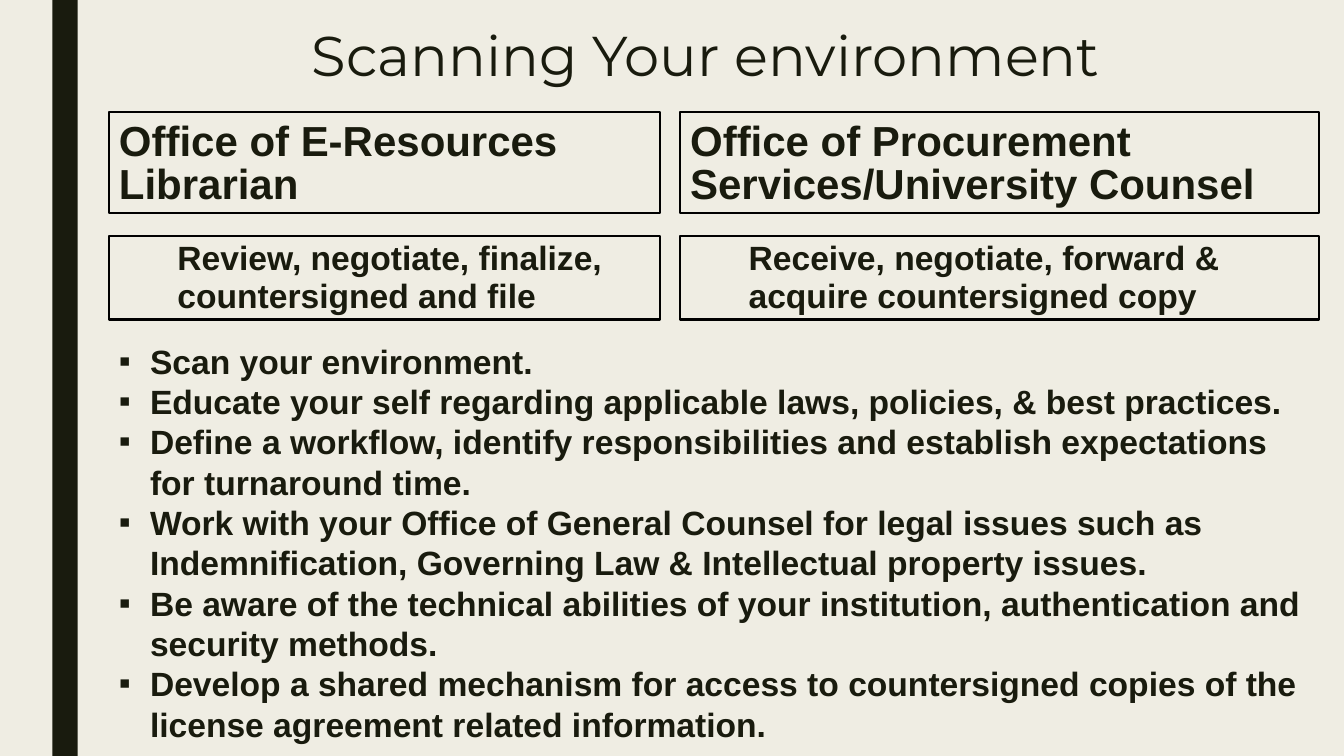
from lxml import etree
from pptx import Presentation
from pptx.dml.color import RGBColor
from pptx.enum.shapes import MSO_SHAPE
from pptx.enum.text import MSO_ANCHOR as ANCHOR, MSO_AUTO_SIZE as AUTO, PP_ALIGN as ALIGN
from pptx.oxml.ns import qn
from pptx.util import Inches, Pt

INK, PAPER, BLACK = "191B0E", "EFEDE3", "000000"
COLUMNS = [
    (1.08, 5.47, "Office of E-Resources Librarian",
     "Review, negotiate, finalize, countersigned and file"),
    (6.745, 6.34, "Office of Procurement Services/University Counsel",
     "Receive, negotiate, forward & acquire countersigned copy"),
]
ADVICE = [
    "Scan your environment.",
    "Educate your self regarding applicable laws, policies, & best practices.",
    "Define a workflow, identify responsibilities and establish expectations "
    "for turnaround time.",
    "Work with your Office of General Counsel for legal issues such as "
    "Indemnification, Governing Law & Intellectual property issues.",
    "Be aware of the technical abilities of your institution, authentication "
    "and security methods.",
    "Develop a shared mechanism for access to countersigned copies of the "
    "license agreement related information.",
]


def rgb(value):
    """Turn a hex string into a colour."""
    return RGBColor.from_string(value)


def place(sp, x, y, w, h):
    """Move a shape to a box given in inches."""
    sp.left, sp.top, sp.width, sp.height = map(Inches, (x, y, w, h))


def write(p, text, size=24, font="Arial", bold=True, align=ALIGN.LEFT,
          spacing=1.0, after=0, level=0, indent=0, hanging=0, bullet=None):
    """Fill a paragraph with formatted text."""
    p.level, p.alignment, p.line_spacing = level, align, spacing
    p.space_before, p.space_after = Pt(0), Pt(after)
    pPr = p._p.get_or_add_pPr()
    pPr.set("marL", str(Inches(indent)))
    pPr.set("indent", str(Inches(-hanging)))
    if bullet:
        etree.SubElement(pPr, qn("a:buFont")).set("typeface", font)
        etree.SubElement(pPr, qn("a:buChar")).set("char", bullet)
    else:
        etree.SubElement(pPr, qn("a:buNone"))
    r = p.add_run()
    r.text = text
    r.font.size, r.font.name, r.font.bold = Pt(size), font, bold
    r.font.color.rgb = rgb(INK)


def fill_placeholder(sp, box, text, anchor=ANCHOR.TOP, border=False, **fmt):
    """Place a placeholder, frame it if asked and write its text."""
    place(sp, *box)
    tf = sp.text_frame
    tf.auto_size, tf.word_wrap, tf.vertical_anchor = AUTO.NONE, True, anchor
    if border:
        sp.line.color.rgb, sp.line.width = rgb(BLACK), Pt(1.5)
    write(tf.paragraphs[0], text, **fmt)


def add_side_bar(s, x, y, w, h):
    """Draw the dark vertical bar."""
    sp = s.shapes.add_shape(MSO_SHAPE.RECTANGLE, *map(Inches, (x, y, w, h)))
    sp.shadow.inherit = False
    sp.fill.solid()
    sp.fill.fore_color.rgb = rgb(INK)
    sp.line.fill.background()


def add_column(head, duty, x, y, w, title, text):
    """Stack an office heading above its duties."""
    fill_placeholder(head, (x, y, w, 1), title, anchor=ANCHOR.BOTTOM,
                     border=True, size=30, spacing=0.84)
    fill_placeholder(duty, (x, y + 1.23, w, 0.83), text, border=True,
                     level=1, indent=0.58, spacing=0.93, after=2)


def add_advice(s, x, y, w, h):
    """List the advice as square bullets."""
    tf = s.shapes.add_textbox(*map(Inches, (x, y, w, h))).text_frame
    tf.word_wrap, tf.auto_size = True, AUTO.SHAPE_TO_FIT_TEXT
    for i, text in enumerate(ADVICE):
        p = tf.add_paragraph() if i else tf.paragraphs[0]
        write(p, text, indent=0.31, hanging=0.31, bullet="▪")


def main():
    """Build and save the slide."""
    prs = Presentation()
    prs.slide_width, prs.slide_height = Inches(13.33), Inches(7.5)
    s = prs.slides.add_slide(prs.slide_layouts.get_by_name("Comparison"))
    s.background.fill.solid()
    s.background.fill.fore_color.rgb = rgb(PAPER)
    add_side_bar(s, 0.52, 0, 0.25, 7.5)
    fill_placeholder(s.shapes.title, (1.5, 0.23, 11, 0.83),
                     "Scanning Your environment", size=40, font="Montserrat",
                     bold=False, align=ALIGN.CENTER, spacing=0.89)
    for i, (x, w, title, text) in enumerate(COLUMNS):
        head, duty = (s.placeholders[2 * i + k] for k in (1, 2))
        add_column(head, duty, x, 1.11, w, title, text)
    add_advice(s, 1.08, 3.33, 12, 4.14)
    prs.save("out.pptx")


if __name__ == "__main__":
    main()
